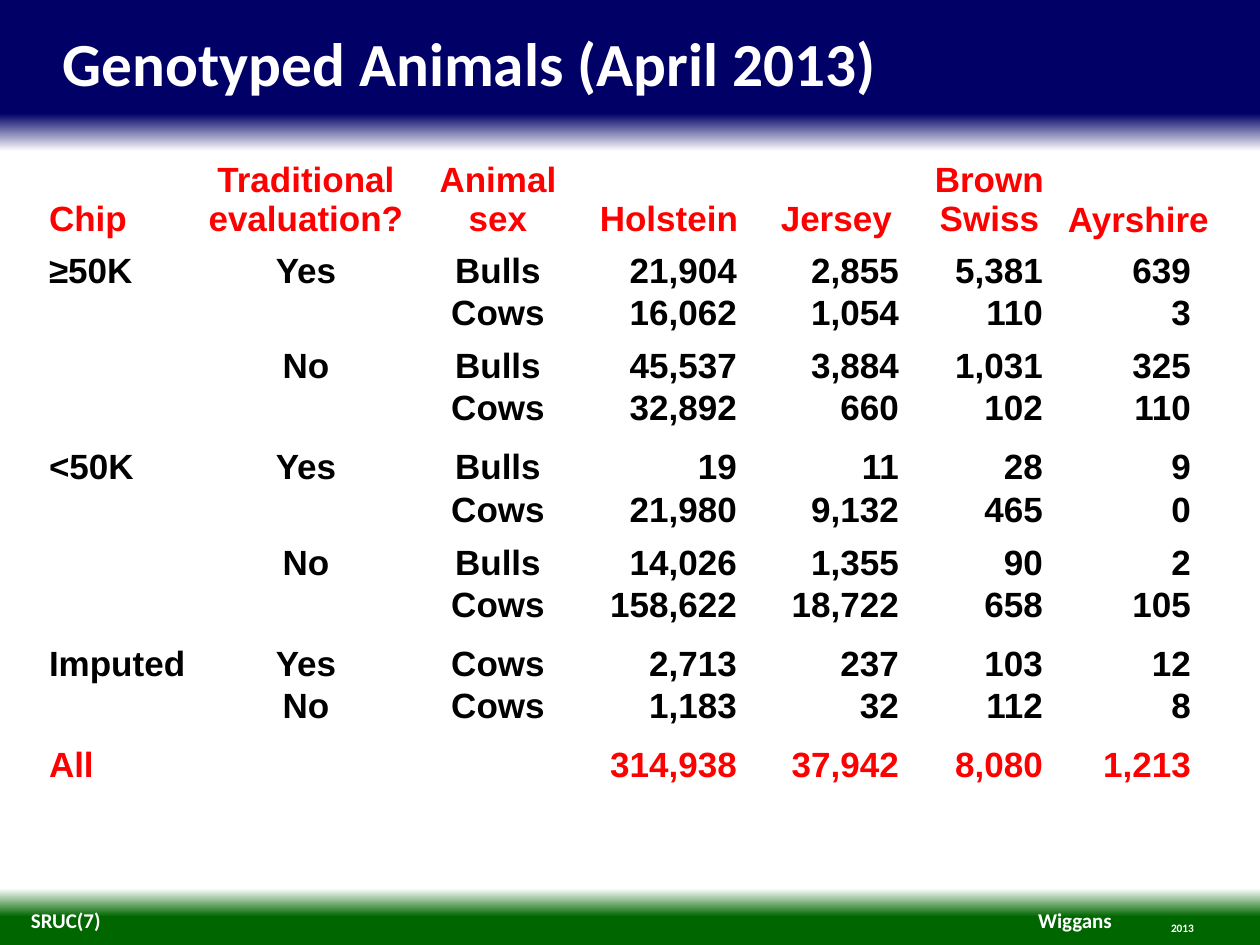
from lxml import etree
from pptx import Presentation
from pptx.dml.color import RGBColor
from pptx.enum.text import MSO_ANCHOR, PP_ALIGN
from pptx.oxml.ns import qn
from pptx.util import Pt

LEFT, CENTER, RIGHT = PP_ALIGN.LEFT, PP_ALIGN.CENTER, PP_ALIGN.RIGHT
TOP, MIDDLE, BOTTOM = MSO_ANCHOR.TOP, MSO_ANCHOR.MIDDLE, MSO_ANCHOR.BOTTOM

PX_PER_INCH = 126
EMU_PER_INCH = 914400
NO_TABLE_STYLE = "{2D5ABB26-0587-4C30-8999-92F81FD0307C}"
COLORS = {
    "navy": "000066",
    "green": "006600",
    "white": "FFFFFF",
    "red": "FF0000",
    "black": "000000",
}

BACKDROP = [(0, "navy"), (12, "navy"), (16, "white"),
            (94, "white"), (97, "green"), (100, "green")]

COLUMN_WIDTHS = [155, 204, 180, 168, 161, 151, 141]
COLUMN_ALIGNS = [LEFT, CENTER, CENTER, RIGHT, RIGHT, RIGHT, RIGHT]
BODY_INSETS = [0, 0, 0, 19, 18, 25, 18]
HEADER_INSETS = [0, 0, 0, 6, 0, 6, 0]
HEADER_HEIGHT, ROW_HEIGHT = 93, 41
HEADER_GAP = 13
ROW_GAPS = [0, 11, 0, 17, 0, 11, 0, 17, 0, 17, 0]

HEADER = ["Chip", "Traditional evaluation?", "Animal sex", "Holstein",
          "Jersey", "Brown Swiss", "Ayrshire"]
ANIMAL_COUNTS = [
    ["≥50K", "Yes", "Bulls", "21,904", "2,855", "5,381", "639"],
    ["", "", "Cows", "16,062", "1,054", "110", "3"],
    ["", "No", "Bulls", "45,537", "3,884", "1,031", "325"],
    ["", "", "Cows", "32,892", "660", "102", "110"],
    ["<50K", "Yes", "Bulls", "19", "11", "28", "9"],
    ["", "", "Cows", "21,980", "9,132", "465", "0"],
    ["", "No", "Bulls", "14,026", "1,355", "90", "2"],
    ["", "", "Cows", "158,622", "18,722", "658", "105"],
    ["Imputed", "Yes", "Cows", "2,713", "237", "103", "12"],
    ["", "No", "Cows", "1,183", "32", "112", "8"],
    ["All", "", "", "314,938", "37,942", "8,080", "1,213"],
]


def px(length):
    return round(length * EMU_PER_INCH / PX_PER_INCH)


class SlideBuilder:
    def __init__(self, slide, heading_font, table_font):
        self.slide = slide
        self.heading_font = heading_font
        self.table_font = table_font

    def style(self, paragraph, font, size, color, align):
        paragraph.alignment = align
        paragraph.font.name = font
        paragraph.font.size = Pt(size)
        paragraph.font.bold = True
        paragraph.font.color.rgb = RGBColor.from_string(COLORS[color])

    def backdrop(self, stops):
        fill = self.slide.background.fill
        fill.gradient()
        fill.gradient_angle = 270
        stop_list = next(self.slide.element.iter(qn("a:gsLst")))
        for stop in list(stop_list):
            stop_list.remove(stop)
        for percent, color in stops:
            stop = etree.SubElement(stop_list, qn("a:gs"), pos=str(percent * 1000))
            etree.SubElement(stop, qn("a:srgbClr"), val=COLORS[color])

    def label(self, text, left, top, width, height, size, align=LEFT,
              anchor=MIDDLE, wrap=True):
        frame = self.slide.shapes.add_textbox(
            px(left), px(top), px(width), px(height)).text_frame
        frame.margin_left = frame.margin_right = 0
        frame.margin_top = frame.margin_bottom = 0
        frame.word_wrap = wrap
        frame.vertical_anchor = anchor
        paragraph = frame.paragraphs[0]
        paragraph.text = text
        self.style(paragraph, self.heading_font, size, "white", align)

    def cell(self, cell, text, color, align, anchor, right, bottom):
        cell.fill.background()
        cell.margin_left = cell.margin_top = 0
        cell.margin_right, cell.margin_bottom = px(right), px(bottom)
        cell.vertical_anchor = anchor
        paragraph = cell.text_frame.paragraphs[0]
        paragraph.text = text
        self.style(paragraph, self.table_font, 20, color, align)

    def table(self, header, body, left, top):
        heights = [HEADER_HEIGHT] + [ROW_HEIGHT + gap for gap in ROW_GAPS]
        frame = self.slide.shapes.add_table(
            len(body) + 1, len(header), px(left), px(top),
            px(sum(COLUMN_WIDTHS)), px(sum(heights)))
        next(frame.element.iter(qn("a:tableStyleId"))).text = NO_TABLE_STYLE
        table = frame.table
        table.first_row = table.horz_banding = False
        for column, width in zip(table.columns, COLUMN_WIDTHS):
            column.width = px(width)
        for row, height in zip(table.rows, heights):
            row.height = px(height)

        for col, name in enumerate(header):
            align = CENTER if col else LEFT
            self.cell(table.cell(0, col), name, "red", align, BOTTOM,
                      HEADER_INSETS[col], HEADER_GAP)
        table.cell(0, len(header) - 1).text_frame.paragraphs[0].line_spacing = 0.9

        for row, (values, gap) in enumerate(zip(body, ROW_GAPS), start=1):
            color = "red" if row == len(body) else "black"
            for col, value in enumerate(values):
                bottom = gap if col == 2 else 0
                self.cell(table.cell(row, col), value, color,
                          COLUMN_ALIGNS[col], TOP, BODY_INSETS[col], bottom)


def main():
    deck = Presentation()
    deck.slide_width, deck.slide_height = px(1260), px(945)
    builder = SlideBuilder(deck.slides.add_slide(deck.slide_layouts[6]),
                           "Calibri", "Arial")
    builder.backdrop(BACKDROP)
    builder.label("Wiggans", 1038, 908, 74, 25, 12, RIGHT, wrap=False)
    builder.label("SRUC(7)", 31, 908, 658, 25, 12)
    builder.label("2013", 1144, 921, 77, 14, 6.5, CENTER)
    builder.label("Genotyped Animals (April 2013)", 63, 25, 1134, 73, 35, anchor=TOP)
    builder.table(HEADER, ANIMAL_COUNTS, 49, 155)
    deck.save("out.pptx")


if __name__ == "__main__":
    main()
